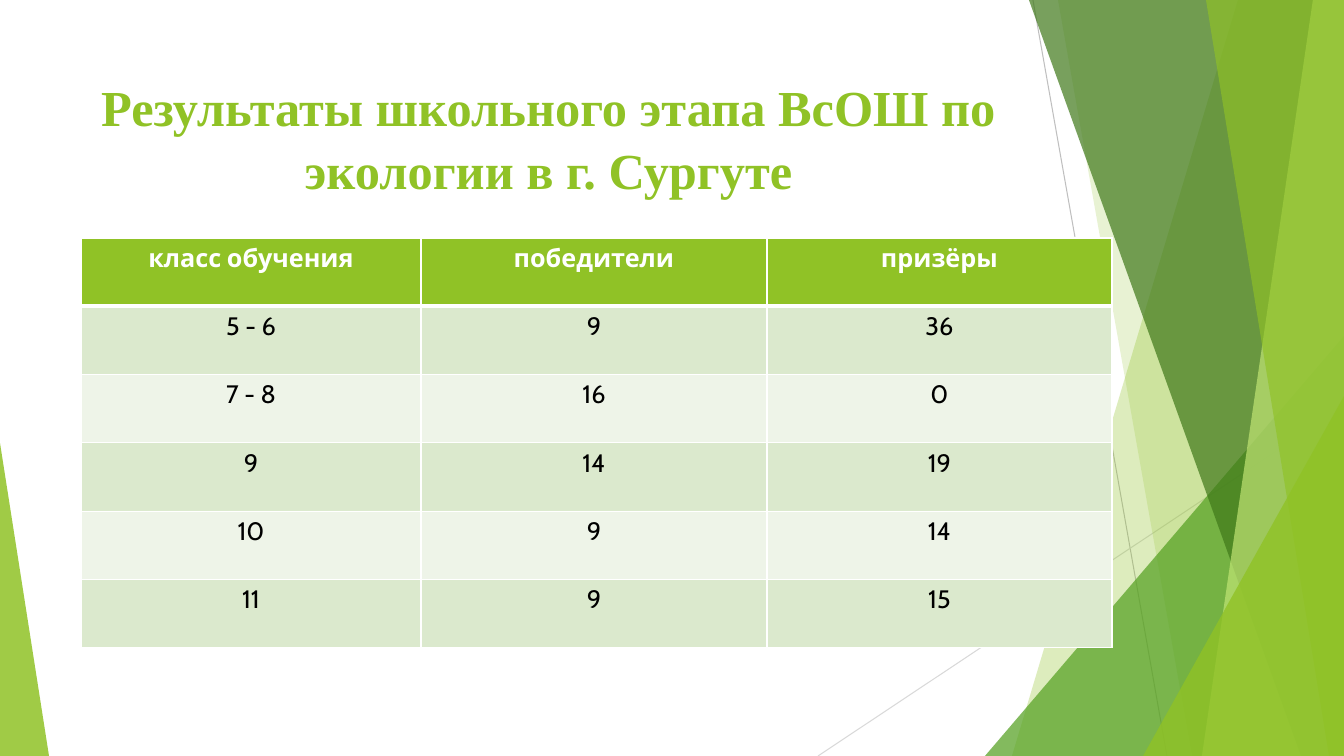
import pptx
import pptx.dml.color
import pptx.enum.shapes
import pptx.enum.text
import pptx.oxml
import pptx.oxml.ns
import pptx.util
from collections import namedtuple
from dataclasses import dataclass

PX = 12192000 / 1344
Box = namedtuple("Box", "left top width height")


@dataclass(frozen=True)
class Theme:
    lime: str = "90C226"
    green: str = "54A021"
    forest: str = "3F7819"
    pale: str = "C0E474"
    gray: str = "BFBFBF"
    light_gray: str = "D9D9D9"
    white: str = "FFFFFF"
    black: str = "000000"
    bands: tuple = ("DBE9CD", "EEF4E8")
    title_font: str = "Times New Roman"
    table_font: str = "Cabin"
    title_size: int = 36
    table_size: int = 18
    thin: int = 1
    thick: int = 3


THEME = Theme()

RESULTS = [
    ("класс обучения", "победители", "призёры"),
    ("5 - 6", "9", "36"),
    ("7 - 8", "16", "0"),
    ("9", "14", "19"),
    ("10", "9", "14"),
    ("11", "9", "15"),
]


def emu(px):
    return round(px * PX)


def rgb(value):
    return pptx.dml.color.RGBColor.from_string(value)


def apply_format(target, values):
    for name, value in values.items():
        setattr(target, name, value)


def write(frame, text, font, size, color, bold, spacing=1.0):
    para = frame.paragraphs[0]
    apply_format(para, {"alignment": pptx.enum.text.PP_ALIGN.CENTER,
                        "line_spacing": spacing})
    span = para.add_run()
    span.text = text
    apply_format(span.font, {"name": font, "size": pptx.util.Pt(size), "bold": bold})
    span.font.color.rgb = rgb(color)


def paint(shape, color, opacity):
    shape.shadow.inherit = False
    shape.line.fill.background()
    shape.fill.solid()
    shape.fill.fore_color.rgb = rgb(color)
    color_node = next(shape.element.spPr.iter(pptx.oxml.ns.qn("a:srgbClr")))
    alpha = color_node.makeelement(pptx.oxml.ns.qn("a:alpha"), {"val": str(opacity * 1000)})
    color_node.append(alpha)


def add_thin_line(page, start, end, color):
    line = page.shapes.add_connector(pptx.enum.shapes.MSO_CONNECTOR.STRAIGHT,
                                     *map(emu, start + end))
    line.line.color.rgb = rgb(color)
    line.line.width = pptx.util.Pt(0.75)
    properties = line.element.spPr
    properties.append(properties.makeelement(pptx.oxml.ns.qn("a:effectLst"), {}))


def add_ray(page, box, top_x, bottom_x, color, opacity):
    """Band from a slanted left edge to the right side of the box."""
    right, bottom = box.left + box.width, box.top + box.height
    outline = page.shapes.build_freeform(emu(box.left + top_x), emu(box.top))
    outline.add_line_segments([(emu(right), emu(box.top)), (emu(right), emu(bottom)),
                               (emu(box.left + bottom_x), emu(bottom))], close=True)
    paint(outline.convert_to_shape(), color, opacity)


def add_corner(page, box, apex, color, opacity):
    corner = page.shapes.add_shape(pptx.enum.shapes.MSO_SHAPE.ISOSCELES_TRIANGLE,
                                   *map(emu, box))
    corner.adjustments[0] = apex
    paint(corner, color, opacity)


def add_right_decoration(page, box):
    left, top, width, height = box
    right, bottom = left + width, top + height

    # Fine lines
    add_thin_line(page, (left + 48, top), (left + 182, bottom), THEME.gray)
    add_thin_line(page, (right, top + 406), (left - 167, bottom), THEME.light_gray)

    # Translucent rays and corners, back to front
    add_ray(page, box, 253, 27, THEME.lime, 30)
    add_ray(page, box, 73, 207, THEME.lime, 20)
    add_corner(page, Box(left, bottom - 420, width, 420), 1, THEME.green, 72)
    add_ray(page, box, 44, 316, THEME.forest, 70)
    add_ray(page, box, 328, 217, THEME.pale, 70)
    add_ray(page, box, 221, 344, THEME.lime, 65)
    add_corner(page, Box(right - 201, bottom - 360, 201, 360), 1, THEME.lime, 80)


def add_title(page, box):
    frame = page.shapes.add_textbox(*map(emu, box)).text_frame
    apply_format(frame, {"word_wrap": True,
                         "vertical_anchor": pptx.enum.text.MSO_ANCHOR.TOP})
    write(frame, "Результаты школьного этапа ВсОШ по экологии в г. Сургуте",
          THEME.title_font, THEME.title_size, THEME.lime, True, 1.05)


def set_borders(cell, widths):
    properties = cell._tc.get_or_add_tcPr()
    for index, (side, width) in enumerate(widths.items()):
        properties.insert(index, pptx.oxml.parse_xml(
            f'<a:ln{side} {pptx.oxml.ns.nsdecls("a")} w="{pptx.util.Pt(width)}">'
            f'<a:solidFill><a:srgbClr val="{THEME.white}"/></a:solidFill></a:ln{side}>'))


def add_results(page, box):
    table = page.shapes.add_table(len(RESULTS), len(RESULTS[0]), *map(emu, box)).table
    for column, width in zip(table.columns, (340, 346, 345)):
        column.width = emu(width)
    for row_index, values in enumerate(RESULTS):
        table.rows[row_index].height = emu(box.height / len(RESULTS))
        header = row_index == 0
        fill = THEME.lime if header else THEME.bands[(row_index - 1) % 2]
        # The rule under the header is shared by the first two rows
        borders = {"L": THEME.thin, "R": THEME.thin,
                   "T": THEME.thick if row_index == 1 else THEME.thin,
                   "B": THEME.thick if header else THEME.thin}
        for column_index, text in enumerate(values):
            cell = table.cell(row_index, column_index)
            cell.fill.solid()
            cell.fill.fore_color.rgb = rgb(fill)
            set_borders(cell, borders)
            write(cell.text_frame, text, THEME.table_font, THEME.table_size,
                  THEME.white if header else THEME.black, header)


def add_results_page(deck, box):
    page = deck.slides.add_slide(deck.slide_layouts[6])
    left, top, width, height = box
    right, bottom = left + width, top + height
    # Background decoration
    add_right_decoration(page, Box(right - 359, top, 359, height))
    add_corner(page, Box(left, bottom - 313, 49, 313), 0, THEME.lime, 85)
    # Content
    add_title(page, Box(left + 75, top + 68, 947, 145))
    add_results(page, Box(left + 81, top + 238, 1031, 410))


def main():
    deck = pptx.Presentation()
    apply_format(deck, {"slide_width": emu(1344), "slide_height": emu(756)})
    add_results_page(deck, Box(0, 0, 1344, 756))
    deck.save("out.pptx")


if __name__ == "__main__":
    main()
